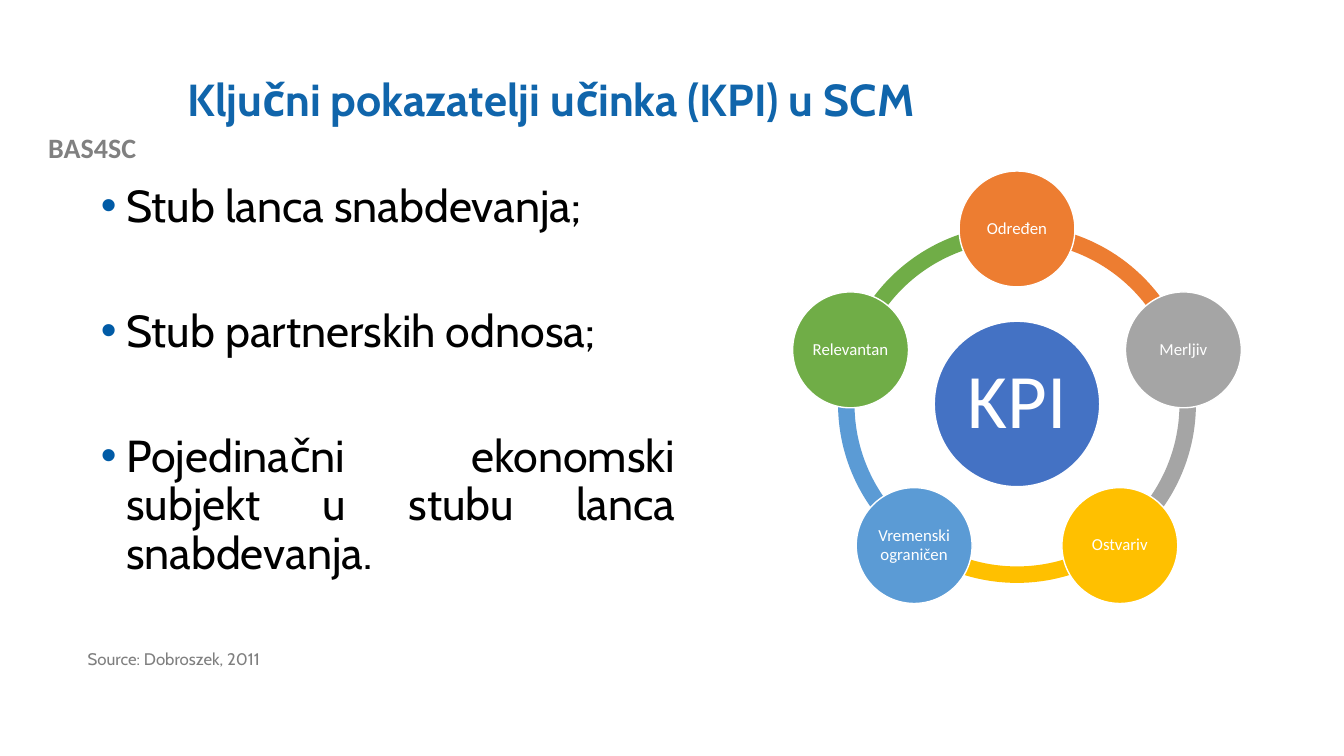
from math import cos, radians, sin

from lxml.etree import SubElement
from pptx import Presentation
from pptx.dml.color import RGBColor
from pptx.enum.shapes import MSO_SHAPE
from pptx.enum.text import MSO_ANCHOR, PP_ALIGN
from pptx.oxml.ns import qn
from pptx.util import Cm, Pt

COLORS = {
    "title": "1065AB",
    "bullet": "015BA6",
    "body": "000000",
    "project": "808080",
    "source": "7F7F7F",
    "white": "FFFFFF",
    "hub": "4472C4",
    "orange": "ED7D31",
    "gray": "A5A5A5",
    "yellow": "FFC000",
    "blue": "5B9BD5",
    "green": "70AD47",
}
CRITERIA = [
    ("Određen", "orange"),
    ("Merljiv", "gray"),
    ("Ostvariv", "yellow"),
    ("Vremenski ograničen", "blue"),
    ("Relevantan", "green"),
]
PILLARS = [
    "Stub lanca snabdevanja;",
    "Stub partnerskih odnosa;",
    "Pojedinačni ekonomski subjekt u stubu lanca snabdevanja.",
]
CENTER_X, CENTER_Y = 25.63, 10.18
ORBIT_RADIUS = 4.41
RING_DIAMETER, HUB_DIAMETER, CRITERION_DIAMETER = 9.02, 4.17, 2.92
STEP = 360 / len(CRITERIA)


class SlideBuilder:
    heading_font = "Cabin"
    diagram_font = "Calibri"
    line_spacing = 0.9

    def __init__(self, slide):
        self.slide = slide

    def style(self, paragraph, size, color, font, bold=False, align=PP_ALIGN.LEFT):
        paragraph.alignment = align
        paragraph.line_spacing = self.line_spacing
        paragraph.font.name = font
        paragraph.font.size = Pt(size)
        paragraph.font.bold = bold
        paragraph.font.color.rgb = RGBColor.from_string(COLORS[color])

    def text_frame(self, left, top, width, height):
        box = self.slide.shapes.add_textbox(Cm(left), Cm(top), Cm(width), Cm(height))
        box.text_frame.word_wrap = True
        return box.text_frame

    def label(self, text, place, size, color, font=heading_font, bold=False,
              align=PP_ALIGN.LEFT, anchor=MSO_ANCHOR.TOP):
        frame = self.text_frame(*place)
        frame.vertical_anchor = anchor
        frame.text = text
        self.style(frame.paragraphs[0], size, color, font, bold, align)

    def bullets(self, items, place, size, gap):
        frame = self.text_frame(*place)
        for index, item in enumerate(items):
            paragraph = frame.add_paragraph() if index else frame.paragraphs[0]
            paragraph.text = item
            properties = paragraph._p.get_or_add_pPr()
            properties.set("marL", str(Cm(0.64)))
            properties.set("indent", str(-Cm(0.64)))
            bullet_color = SubElement(properties, qn("a:buClr"))
            SubElement(bullet_color, qn("a:srgbClr"), val=COLORS["bullet"])
            SubElement(properties, qn("a:buFont"), typeface="Arial")
            SubElement(properties, qn("a:buChar"), char="•")
            paragraph.space_before = Pt(gap if index else 0)
            self.style(paragraph, size, "body", self.heading_font,
                       align=PP_ALIGN.JUSTIFY)

    def round_shape(self, kind, x, y, diameter, color):
        """Add a filled shape centred on x, y."""
        shape = self.slide.shapes.add_shape(
            kind, Cm(x - diameter / 2), Cm(y - diameter / 2),
            Cm(diameter), Cm(diameter))
        shape.shadow.inherit = False
        shape.fill.solid()
        shape.fill.fore_color.rgb = RGBColor.from_string(COLORS[color])
        return shape

    def arc(self, start, end, color):
        """Add a ring segment between two clockwise angles in degrees."""
        arc = self.round_shape(MSO_SHAPE.BLOCK_ARC, CENTER_X, CENTER_Y,
                               RING_DIAMETER, color)
        arc.line.fill.background()
        # Angles are stored in 60000ths of a degree, adjustments in 100000ths.
        for index, value in enumerate((start * 0.6, end * 0.6, 0.046)):
            arc.adjustments[index] = value

    def circle(self, text, x, y, diameter, color, size, inset):
        circle = self.round_shape(MSO_SHAPE.OVAL, x, y, diameter, color)
        circle.line.color.rgb = RGBColor.from_string(COLORS["white"])
        circle.line.width = Pt(1)
        frame = circle.text_frame
        frame.word_wrap = True
        frame.vertical_anchor = MSO_ANCHOR.MIDDLE
        frame.margin_left = frame.margin_right = Cm(inset)
        frame.margin_top = frame.margin_bottom = Cm(inset)
        frame.text = text
        self.style(frame.paragraphs[0], size, "white", self.diagram_font,
                   align=PP_ALIGN.CENTER)


def main():
    presentation = Presentation()
    presentation.slide_width = Cm(33.87)
    presentation.slide_height = Cm(19.05)
    builder = SlideBuilder(presentation.slides.add_slide(presentation.slide_layouts[6]))

    builder.label("BAS4SC", (0, 3.25, 4.65, 1.12), 20, "project",
                  font=builder.diagram_font, bold=True, align=PP_ALIGN.CENTER)
    builder.label("Ključni pokazatelji učinka (KPI) u SCM", (4.47, 1.02, 27.08, 3.1),
                  32, "title", bold=True, anchor=MSO_ANCHOR.MIDDLE)
    builder.bullets(PILLARS, (2.29, 4.5, 14.99, 12.09), size=32, gap=54.8)
    builder.label("Source: Dobroszek, 2011", (1.96, 16.28, 12.73, 1.32), 12, "source")

    angles = [(270 + STEP * index) % 360 for index in range(len(CRITERIA))]
    for angle, (_, color) in zip(angles, CRITERIA):
        builder.arc(angle, (angle + STEP) % 360, color)
    builder.circle("KPI", CENTER_X, CENTER_Y, HUB_DIAMETER, "hub", 55, 0.2)
    for angle, (criterion, color) in zip(angles, CRITERIA):
        builder.circle(criterion,
                       CENTER_X + ORBIT_RADIUS * cos(radians(angle)),
                       CENTER_Y + ORBIT_RADIUS * sin(radians(angle)),
                       CRITERION_DIAMETER, color, 12, 0.05)

    presentation.save("out.pptx")


if __name__ == "__main__":
    main()
